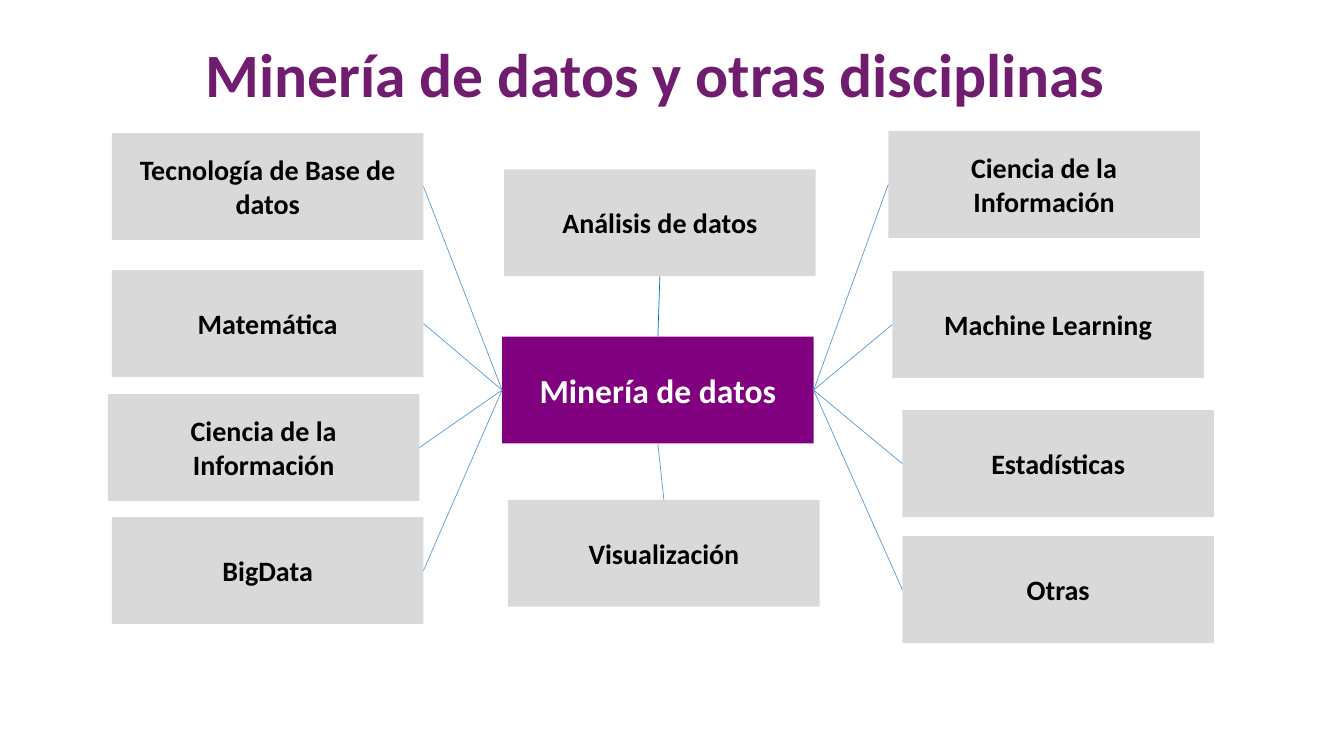
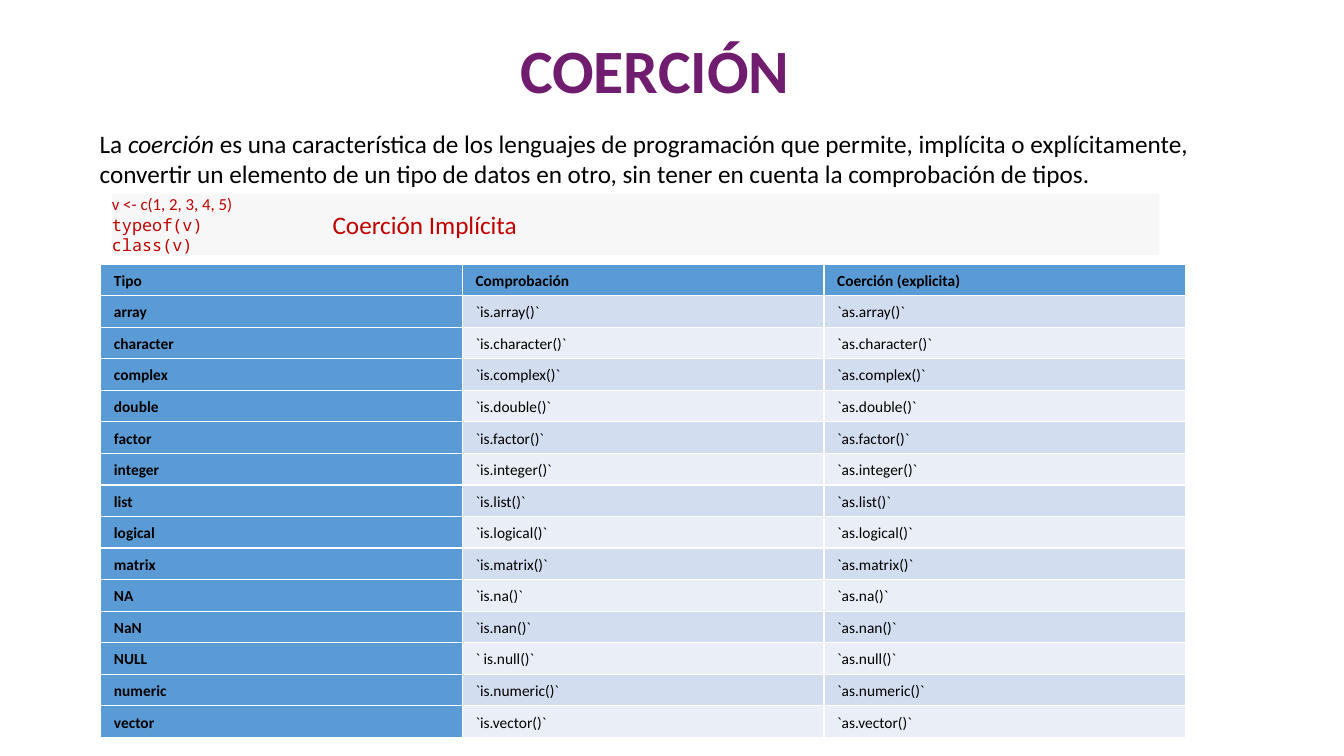
"""Builds two slides: data mining with its related disciplines, and type coercion."""
from dataclasses import dataclass

from lxml import etree
from pptx import Presentation
from pptx import util as u
from pptx.dml.color import RGBColor
from pptx.enum import shapes, text
from pptx.oxml.ns import qn

TOP, LEFT, BOTTOM, RIGHT = range(4)
OPPOSITE = {TOP: BOTTOM, LEFT: RIGHT, BOTTOM: TOP, RIGHT: LEFT}


@dataclass(frozen=True)
class Theme:
    """Colours, fonts and type sizes of the deck."""
    title: str = "701C6F"
    centre: str = "800080"
    box: str = "D9D9D9"
    line: str = "5B9BD5"
    strong_line: str = "0070C0"
    header: str = "5B9BD5"
    bands: tuple[str, str] = ("D2DEEF", "EAEFF7")
    code_fill: str = "F7F7F7"
    code: str = "C00000"
    ink: str = "000000"
    white: str = "FFFFFF"
    font: str = "Calibri"
    mono: str = "Noto Sans Mono"
    title_size: int = 44
    centre_size: int = 24
    box_size: int = 20
    body_size: int = 18
    code_size: int = 12
    table_size: int = 11


@dataclass(frozen=True)
class Discipline:
    """A box and the side of the centre box that it is joined to."""
    label: str
    left: float
    top: float
    side: int
    line: str = Theme.line


THEME = Theme()
BOX_WIDTH, BOX_HEIGHT = 3.09, 1.06
DISCIPLINES = (
    Discipline("Análisis de datos", 5, 1.68, TOP, THEME.strong_line),
    Discipline("Tecnología de Base de datos", 1.11, 1.32, LEFT),
    Discipline("Matemática", 1.11, 2.68, LEFT),
    Discipline("Ciencia de la Información", 1.07, 3.91, LEFT),
    Discipline("BigData", 1.11, 5.13, LEFT),
    Discipline("Ciencia de la Información", 8.81, 1.3, RIGHT),
    Discipline("Machine Learning", 8.85, 2.69, RIGHT),
    Discipline("Estadísticas", 8.95, 4.07, RIGHT),
    Discipline("Otras", 8.95, 5.32, RIGHT),
    Discipline("Visualización", 5.04, 4.96, BOTTOM),
)
HEADERS = ("Tipo", "Comprobación", "Coerción (explicita)")
TYPES = ("array", "character", "complex", "double", "factor", "integer", "list",
         "logical", "matrix", "NA", "NaN", "NULL", "numeric", "vector")


def style(paragraph, size: int, colour: str, bold: bool = False, font: str = THEME.font) -> None:
    """Set the font of a whole paragraph."""
    paragraph.font.name = font
    paragraph.font.size = u.Pt(size)
    paragraph.font.bold = bold
    paragraph.font.color.rgb = RGBColor.from_string(colour)


def fill_with(item, colour: str) -> None:
    """Give a shape or a cell a solid fill."""
    item.fill.solid()
    item.fill.fore_color.rgb = RGBColor.from_string(colour)


def add_page(deck, title: str, left: float, top: float):
    """Add a page with the shared title style."""
    page = deck.slides.add_slide(deck.slide_layouts[5])
    box = page.shapes.title
    box.left, box.top = u.Inches(left), u.Inches(top)
    box.width, box.height = u.Inches(9.67), u.Inches(1.45)
    frame = box.text_frame
    frame.text = title
    frame.auto_size = text.MSO_AUTO_SIZE.NONE
    frame.vertical_anchor = text.MSO_ANCHOR.MIDDLE
    para = frame.paragraphs[0]
    para.alignment = text.PP_ALIGN.CENTER
    para.line_spacing = 0.9
    style(para, THEME.title_size, THEME.title, bold=True)
    return page


def add_rectangle(page, left: float, top: float, width: float, height: float, colour: str):
    """Add a plain rectangle without outline or shadow."""
    box = page.shapes.add_shape(shapes.MSO_SHAPE.RECTANGLE, u.Inches(left), u.Inches(top),
                                u.Inches(width), u.Inches(height))
    box.shadow.inherit = False
    box.line.fill.background()
    fill_with(box, colour)
    box.text_frame.vertical_anchor = text.MSO_ANCHOR.MIDDLE
    return box


def add_label_box(page, label: str, left: float, top: float, colour: str, size: int, ink: str):
    """Add a box of the diagram with a bold centred label."""
    box = add_rectangle(page, left, top, BOX_WIDTH, BOX_HEIGHT, colour)
    box.text_frame.text = label
    para = box.text_frame.paragraphs[0]
    para.alignment = text.PP_ALIGN.CENTER
    style(para, size, ink, bold=True)
    return box


def join(page, box, centre, side: int, colour: str) -> None:
    """Join a box to the given side of the centre box."""
    line = page.shapes.add_connector(shapes.MSO_CONNECTOR.STRAIGHT, 0, 0, 0, 0)
    line.begin_connect(box, OPPOSITE[side])
    line.end_connect(centre, side)
    line.line.color.rgb = RGBColor.from_string(colour)
    line.line.width = u.Pt(0.5)
    etree.SubElement(line._element.spPr, qn("a:effectLst"))


def add_text_box(page, left: float, top: float, width: float, height: float, wrap: bool):
    """Add a text box and return its text frame."""
    frame = page.shapes.add_textbox(u.Inches(left), u.Inches(top),
                                    u.Inches(width), u.Inches(height)).text_frame
    frame.word_wrap = wrap
    return frame


def add_cell(cell, label: str, colour: str, bold: bool) -> None:
    """Fill in one table cell."""
    fill_with(cell, colour)
    cell.margin_left = cell.margin_right = u.Inches(0.13)
    cell.margin_top, cell.margin_bottom = u.Inches(0.06), u.Inches(0.05)
    cell.vertical_anchor = text.MSO_ANCHOR.MIDDLE
    cell.text = label
    para = cell.text_frame.paragraphs[0]
    para.line_spacing = 1.07
    style(para, THEME.table_size, THEME.ink, bold)


def add_type_table(page) -> None:
    """Add the table of types with their check and coercion functions."""
    rows = [HEADERS]
    for name in TYPES:
        gap = " " if name == "NULL" else ""
        rows.append((name, f"`{gap}is.{name.lower()}()`", f"`as.{name.lower()}()`"))
    table = page.shapes.add_table(len(rows), len(HEADERS), u.Inches(1), u.Inches(2.62),
                                  u.Inches(10.76), u.Inches(4.7)).table
    table.first_col = True
    table.horz_banding = False
    for row, labels in enumerate(rows):
        for column, label in enumerate(labels):
            heading = row == 0 or column == 0
            colour = THEME.header if heading else THEME.bands[(row - 1) % 2]
            add_cell(table.cell(row, column), label, colour, heading)


def build_disciplines(deck) -> None:
    """Build the diagram of data mining and its neighbours."""
    page = add_page(deck, "Minería de datos y otras disciplinas", 1.67, 0.04)
    centre = add_label_box(page, "Minería de datos", 4.98, 3.34, THEME.centre,
                           THEME.centre_size, THEME.white)
    for item in DISCIPLINES:
        box = add_label_box(page, item.label, item.left, item.top, THEME.box,
                            THEME.box_size, THEME.ink)
        join(page, box, centre, item.side, item.line)


def build_coercion(deck) -> None:
    """Build the page on implicit and explicit coercion."""
    page = add_page(deck, "COERCIÓN ", 1.73, 0)
    frame = add_text_box(page, 0.89, 1.22, 11.35, 0.71, wrap=True)
    frame.vertical_anchor = text.MSO_ANCHOR.MIDDLE
    para = frame.paragraphs[0]
    spans = (
        ("La ", False),
        ("coerción", True),
        (" es una característica de los lenguajes de programación que permite, implícita o "
         "explícitamente, convertir un elemento de un tipo de datos en otro, sin tener en "
         "cuenta la comprobación de tipos.", False),
    )
    for words, italic in spans:
        span = para.add_run()
        span.text = words
        span.font.italic = italic
    style(para, THEME.body_size, THEME.ink)

    add_type_table(page)

    frame = add_rectangle(page, 1.11, 1.92, 10.39, 0.61, THEME.code_fill).text_frame
    frame.margin_left = frame.margin_right = frame.margin_top = frame.margin_bottom = 0
    frame.text = "v <- c(1, 2, 3, 4, 5)\ntypeof(v)\nclass(v)"
    for para, font in zip(frame.paragraphs, (THEME.font, THEME.mono, THEME.mono)):
        para.alignment = text.PP_ALIGN.JUSTIFY
        style(para, THEME.code_size, THEME.code, font=font)

    frame = add_text_box(page, 3.2, 2.03, 2.05, 0.4, wrap=False)
    frame.text = "Coerción Implícita"
    style(frame.paragraphs[0], THEME.body_size, THEME.code)


def main() -> None:
    """Build and save the deck."""
    deck = Presentation()
    deck.slide_width, deck.slide_height = u.Inches(13.33), u.Inches(7.5)
    build_disciplines(deck)
    build_coercion(deck)
    deck.save("out.pptx")


if __name__ == "__main__":
    main()
